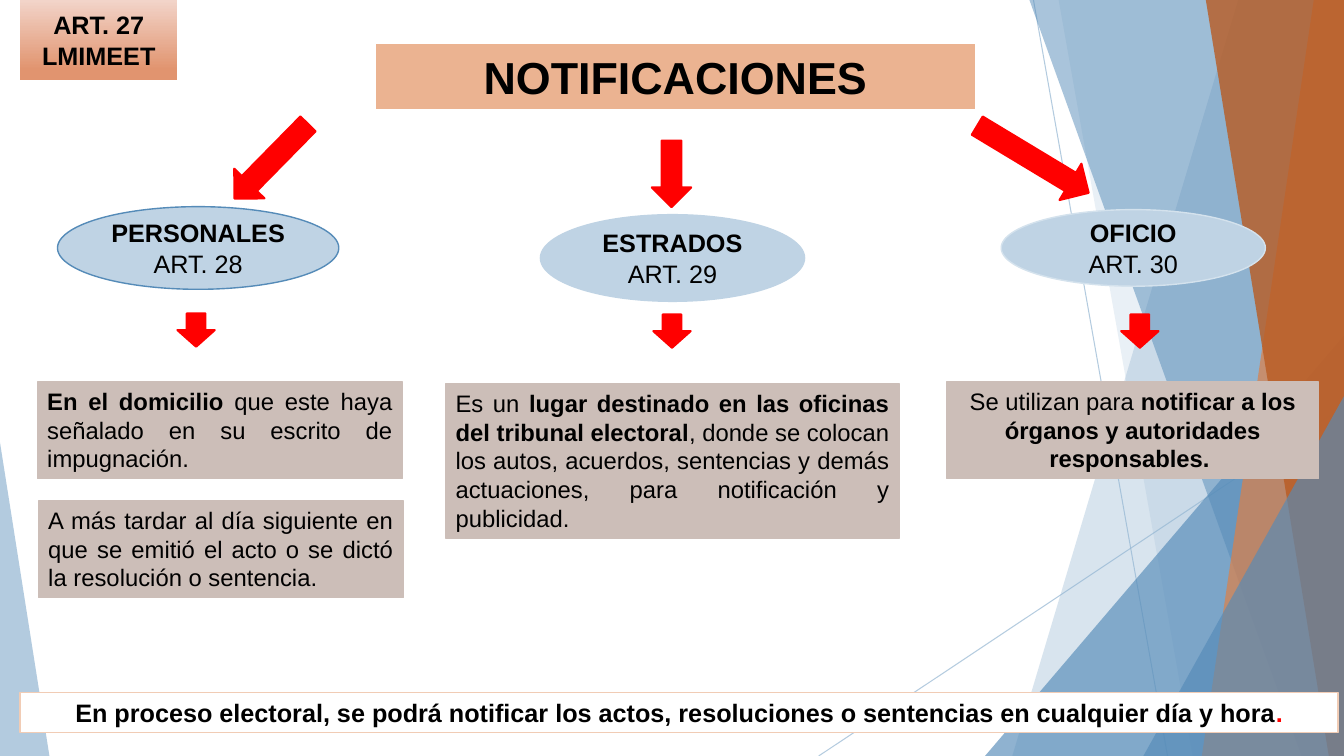
from lxml import etree
from pptx import Presentation
from pptx import util as u
from pptx.dml.color import RGBColor
from pptx.enum import shapes, text
from pptx.oxml.ns import qn

PX = 9144
W, H = 1333, 750
KIND = shapes.MSO_SHAPE
ALIGN = text.PP_ALIGN
ANCHOR = text.MSO_ANCHOR
BLACK, RED = "000000", "FF0000"
PALE, BLUE, ORANGE, RUST = "94B6D2", "558BB8", "DD8047", "B95B22"
SAND, SKY, PEACH = "CCBEB8", "BFD3E4", "EBB391"


def px(*lengths):
    """Turn px lengths into EMU."""
    return [u.Emu(round(length * PX)) for length in lengths]


def paint(color_format, color, opacity=100):
    """Set a hex colour, with an opacity in percent."""
    color_format.rgb = RGBColor.from_string(color)
    if opacity < 100:
        for srgb in color_format._xFill.iter(qn("a:srgbClr")):
            etree.SubElement(srgb, qn("a:alpha"), val=str(opacity * 1000))


def finish(shape, fill, opacity=100, edge=None, weight=1):
    """Give a shape its fill and edge, without a shadow."""
    shape.shadow.inherit = False
    shape.fill.solid()
    paint(shape.fill.fore_color, fill, opacity)
    if edge:
        paint(shape.line.color, edge)
        shape.line.width = u.Pt(weight)
    else:
        shape.line.fill.background()
    return shape


def ray(slide, start, end):
    """Draw a thin translucent background line."""
    line = slide.shapes.add_connector(
        shapes.MSO_CONNECTOR.STRAIGHT, *px(*start, *end))
    line.line.width = u.Pt(0.75)
    line.line.fill.solid()
    paint(line.line.fill.fore_color, PALE, 70)
    etree.SubElement(line._element.spPr, qn("a:effectLst"))


def facet(slide, top, bottom, color, opacity):
    """Draw a panel from a slanted left side to the right slide edge."""
    builder = slide.shapes.build_freeform(top, 0, scale=PX)
    builder.add_line_segments([(W, 0), (W, H), (bottom, H)], close=True)
    finish(builder.convert_to_shape(), color, opacity)


def wedge(slide, box, tip, color, opacity):
    """Draw a right triangle whose apex lies at the given share of its width."""
    triangle = slide.shapes.add_shape(KIND.ISOSCELES_TRIANGLE, *px(*box))
    triangle.adjustments[0] = tip
    finish(triangle, color, opacity)


def backdrop(slide):
    """Draw the layered facets behind the content."""
    ray(slide, (1025, 0), (1158, H))
    ray(slide, (W, 403), (812, H))
    facet(slide, 1228, 1004, PALE, 36)
    facet(slide, 1050, 1183, PALE, 20)
    wedge(slide, (977, 333, 356, 417), 1, BLUE, 66)
    facet(slide, 1021, 1291, BLUE, 50)
    facet(slide, 1303, 1192, ORANGE, 70)
    facet(slide, 1196, 1318, RUST, 80)
    wedge(slide, (1134, 393, 199, 357), 1, BLUE, 66)
    wedge(slide, (0, 439, 49, 311), 0, PALE, 70)


def write(shape, paragraphs, size, align=ALIGN.CENTER, anchor=ANCHOR.TOP):
    """Write paragraphs of (words, bold, colour) runs."""
    frame = shape.text_frame
    frame.word_wrap = True
    frame.vertical_anchor = anchor
    for index, runs in enumerate(paragraphs):
        paragraph = frame.add_paragraph() if index else frame.paragraphs[0]
        paragraph.alignment = align
        for words, bold, color in runs:
            run = paragraph.add_run()
            run.text = words
            run.font.name = "Arial"
            run.font.size = u.Pt(size)
            run.font.bold = bold
            paint(run.font.color, color)


def panel(slide, box, fill, edge, runs, size, align=ALIGN.CENTER, weight=1):
    """Draw a rectangle holding one paragraph."""
    shape = slide.shapes.add_shape(KIND.RECTANGLE, *px(*box))
    finish(shape, fill, edge=edge, weight=weight)
    write(shape, [runs], size, align)


def note(slide, box, *runs, align=ALIGN.JUSTIFY):
    """Draw a sand panel from (words, bold) runs."""
    panel(slide, box, SAND, SAND,
          [(words, bold, BLACK) for words, bold in runs], 17, align)


def category(slide, box, edge, name, article):
    """Draw the ellipse of one kind of notification."""
    ellipse = slide.shapes.add_shape(KIND.OVAL, *px(*box))
    finish(ellipse, SKY, edge=edge)
    write(ellipse, [[(name, True, BLACK)], [(article, False, BLACK)]], 18,
          anchor=ANCHOR.MIDDLE)


def arrow(slide, box, turn=90):
    """Draw a red block arrow turned clockwise."""
    pointer = slide.shapes.add_shape(KIND.RIGHT_ARROW, *px(*box))
    finish(pointer, RED, edge=RED, weight=1.5)
    pointer.rotation = turn


def law_tag(slide):
    """Draw the gradient tag that cites the law."""
    tag = slide.shapes.add_shape(KIND.RECTANGLE, *px(20, 0, 156, 79))
    finish(tag, PEACH)
    tag.fill.gradient()
    tag.fill.gradient_angle = 270
    stops = ((0, "F2D4C9"), (0.88, "E1946F"))
    for stop, (position, color) in zip(tag.fill.gradient_stops, stops):
        stop.position = position
        stop.color.rgb = RGBColor.from_string(color)
    write(tag, [[("ART. 27 LMIMEET", True, BLACK)]], 18,
          anchor=ANCHOR.MIDDLE)


def main():
    """Build and save the slide."""
    deck = Presentation()
    deck.slide_width, deck.slide_height = px(W, H)
    slide = deck.slides.add_slide(deck.slide_layouts[6])
    backdrop(slide)

    panel(slide, (20, 687, 1307, 40), "FFFFFF", "F1CCB5", [
        ("En proceso electoral, se podrá notificar los actos, resoluciones "
         "o sentencias en cualquier día y hora", True, BLACK),
        (".", True, RED)], 18)
    panel(slide, (373, 44, 594, 64), PEACH, PEACH,
          [("NOTIFICACIONES", True, BLACK)], 32, weight=0.75)
    law_tag(slide)

    category(slide, (57, 205, 279, 82), BLUE, "PERSONALES", "ART. 28")
    category(slide, (536, 213, 262, 86), SKY, "ESTRADOS", "ART. 29")
    category(slide, (993, 208, 262, 76), "D4E2ED", "OFICIO", "ART. 30")

    note(slide, (37, 379, 362, 96), ("En el domicilio", True),
         (" que este haya señalado en su escrito de impugnación. ", False))
    note(slide, (38, 497, 362, 96),
         ("A más tardar al día siguiente en que se emitió el acto o se dictó "
          "la resolución o sentencia. ", False))
    note(slide, (442, 381, 450, 153), ("Es un ", False),
         ("lugar destinado en las oficinas del tribunal electoral", True),
         (", donde se colocan los autos, acuerdos, sentencias y demás "
          "actuaciones, para notificación y publicidad. ", False))
    note(slide, (939, 379, 369, 96), ("Se utilizan para ", False),
         ("notificar a los órganos y autoridades responsables. ", True),
         align=ALIGN.CENTER)

    arrow(slide, (217, 139, 104, 42), 134.5)
    arrow(slide, (633, 153, 66, 39))
    arrow(slide, (960, 137, 129, 42), 31.1)
    for left, top in ((178, 309), (650, 310), (1114, 310)):
        arrow(slide, (left, top, 33, 37))

    deck.save("out.pptx")


if __name__ == "__main__":
    main()
